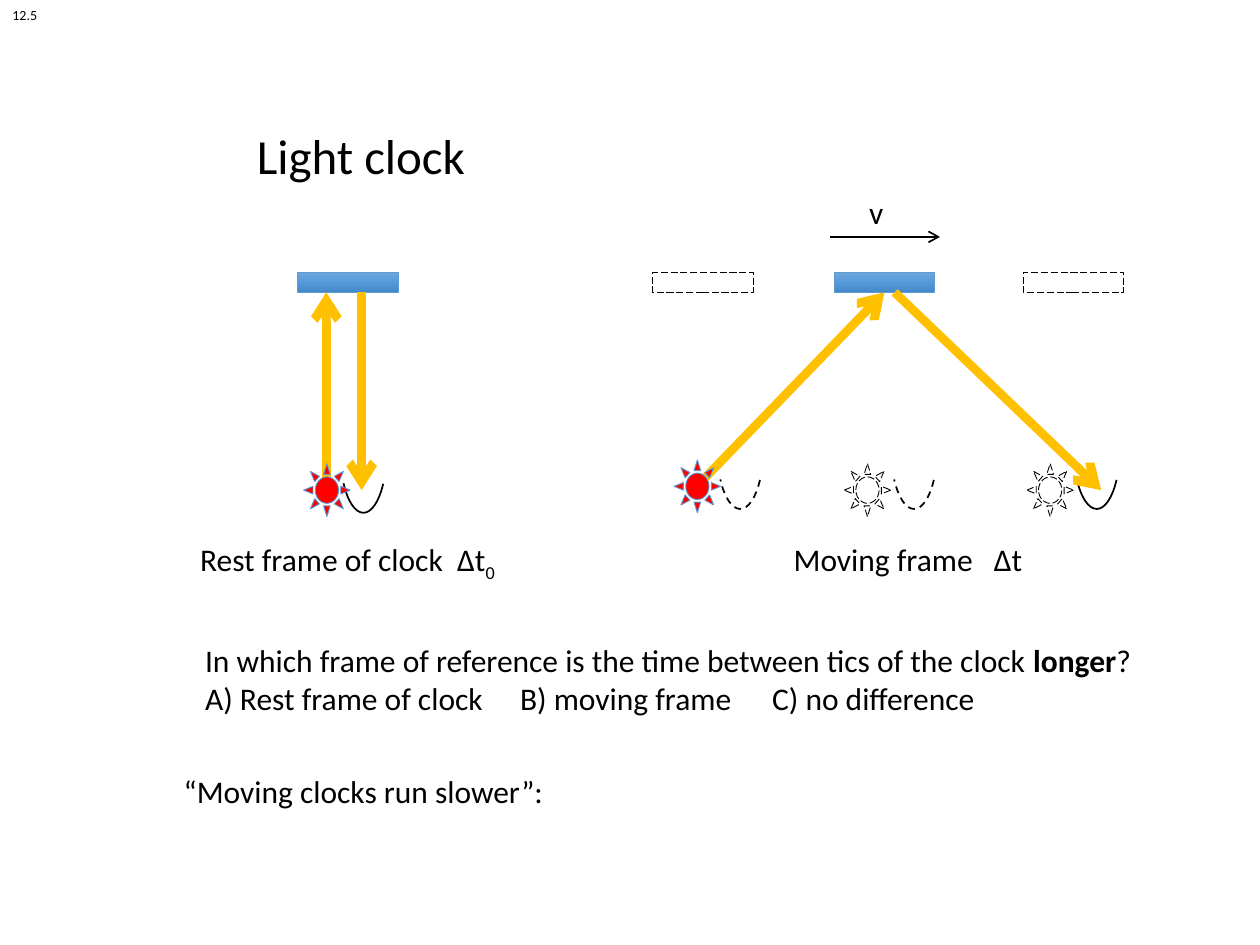
from copy import deepcopy

from pptx import Presentation
from pptx.dml.color import RGBColor
from pptx.enum.dml import MSO_LINE
from pptx.enum.shapes import MSO_CONNECTOR, MSO_SHAPE
from pptx.enum.text import MSO_ANCHOR, MSO_AUTO_SIZE
from pptx.oxml.ns import qn
from pptx.util import Inches, Pt
from lxml.etree import SubElement

COLORS = {
    "ink": "000000",
    "light": "FFC000",
    "lamp": "FF0000",
    "edge": "5B9BD5",
    "top": "71A6DB",
    "mid": "559BDB",
    "low": "448ACA",
}
FONT = "Calibri"


def rgb(name):
    return RGBColor.from_string(COLORS[name])


def add_text(slide, box, lines, size=18, wrap=True):
    """Each line is a list of (text, style) runs."""
    frame = slide.shapes.add_textbox(*map(Inches, box)).text_frame
    frame.word_wrap = wrap
    frame.auto_size = MSO_AUTO_SIZE.SHAPE_TO_FIT_TEXT
    for i, runs in enumerate(lines):
        para = frame.paragraphs[0] if i == 0 else frame.add_paragraph()
        for words, style in runs:
            run = para.add_run()
            run.text = words
            font = run.font
            font.name, font.size = FONT, Pt(size)
            font.color.rgb = rgb("ink")
            if style == "bold":
                font.bold = True
            elif style == "sub":
                font._element.set("baseline", "-25000")
    return frame


def add_shape(slide, kind, box, edge="ink", width=0.5, dash=None):
    shape = slide.shapes.add_shape(kind, *map(Inches, box))
    shape.shadow.inherit = False
    shape.fill.background()
    shape.line.color.rgb = rgb(edge)
    shape.line.width = Pt(width)
    if dash:
        shape.line.dash_style = dash
    return shape


def add_mirror(slide, left, ghost=False):
    box = (left, 2.16, 0.8, 0.16)
    if ghost:
        add_shape(slide, MSO_SHAPE.RECTANGLE, box, dash=MSO_LINE.LONG_DASH)
        return
    shape = add_shape(slide, MSO_SHAPE.RECTANGLE, box, edge="edge")
    fill = shape.fill
    fill.gradient()
    fill.gradient_angle = 270
    # A new gradient has two stops; this one needs three
    stops = shape._element.spPr.find(".//" + qn("a:gsLst"))
    stops.append(deepcopy(stops[0]))
    for stop, place, name in zip(fill.gradient_stops, (0, 0.5, 1),
                                 ("top", "mid", "low")):
        stop.position = place
        stop.color.rgb = rgb(name)


def add_lamp(slide, left, top=3.68, ghost=False):
    box = (left, top, 0.37, 0.42)
    if ghost:
        add_shape(slide, MSO_SHAPE.SUN, box, dash=MSO_LINE.LONG_DASH)
        return
    shape = add_shape(slide, MSO_SHAPE.SUN, box, edge="edge")
    shape.fill.solid()
    shape.fill.fore_color.rgb = rgb("lamp")


def add_dish(slide, left, top=3.06, dash=None):
    arc = add_shape(slide, MSO_SHAPE.ARC, (left, top, 0.37, 0.98),
                    width=1, dash=dash)
    arc.adjustments[0] = 35.304
    arc.adjustments[1] = 73.005


def add_arrow(slide, start, end, color="light", width=5):
    arrow = slide.shapes.add_connector(
        MSO_CONNECTOR.STRAIGHT, *map(Inches, start + end))
    arrow.line.color.rgb = rgb(color)
    arrow.line.width = Pt(width)
    props = arrow._element.spPr
    SubElement(props.find(qn("a:ln")), qn("a:tailEnd"), type="arrow")
    SubElement(props, qn("a:effectLst"))


def draw_rest(slide):
    add_mirror(slide, 2.36)
    add_dish(slide, 2.7, top=3.09)
    add_arrow(slide, (2.59, 3.89), (2.59, 2.32))
    add_arrow(slide, (2.87, 2.32), (2.87, 3.89))
    add_lamp(slide, 2.41)
    add_text(slide, (1.49, 4.24, 3.06, 0.4),
             [[("Rest frame of clock  Δt", None), ("0", "sub")]])


def draw_moving(slide):
    # Solid parts and the path of the light
    add_mirror(slide, 6.62)
    add_dish(slide, 8.52)
    add_arrow(slide, (5.53, 3.86), (7.02, 2.32))
    add_arrow(slide, (7.1, 2.32), (8.74, 3.89))
    add_lamp(slide, 5.35, top=3.65)
    add_text(slide, (6.2, 4.24, 2.32, 0.4), [[("Moving frame   Δt", None)]])

    # Dashed parts: the clock at other moments
    for left in (5.18, 8.12):
        add_mirror(slide, left, ghost=True)
    for left in (6.7, 8.15):
        add_lamp(slide, left, ghost=True)
    for left in (7.07, 5.69):
        add_dish(slide, left, dash=MSO_LINE.DASH)

    # Velocity
    add_arrow(slide, (6.59, 1.88), (7.46, 1.88), color="ink", width=1)
    add_text(slide, (6.8, 1.48, 0.7, 0.4), [[("v", None)]])


def main():
    deck = Presentation()
    deck.slide_width, deck.slide_height = Inches(10), Inches(7.5)
    slide = deck.slides.add_slide(deck.slide_layouts[6])

    # Title
    title = add_text(slide, (1.94, 0.63, 1.86, 1.25),
                     [[("Light clock", None)]], size=28)
    title.auto_size = MSO_AUTO_SIZE.NONE
    title.vertical_anchor = MSO_ANCHOR.MIDDLE
    title.paragraphs[0].line_spacing = 0.9

    # The two clocks
    draw_rest(slide)
    draw_moving(slide)

    # Question, conclusion and section number
    add_text(slide, (1.53, 5.04, 7.63, 0.71), [
        [("In which frame of reference is the time between tics "
          "of the clock ", None), ("longer", "bold"), ("?", None)],
        [("A) Rest frame of clock\tB) moving frame\tC) no difference", None)],
    ], wrap=False)
    add_text(slide, (1.36, 6.08, 3.2, 0.4),
             [[("“Moving clocks run slower”:", None)]], wrap=False)
    add_text(slide, (0, 0, 0.4, 0.24), [[("12.5", None)]], size=8, wrap=False)

    deck.save("out.pptx")


if __name__ == "__main__":
    main()
